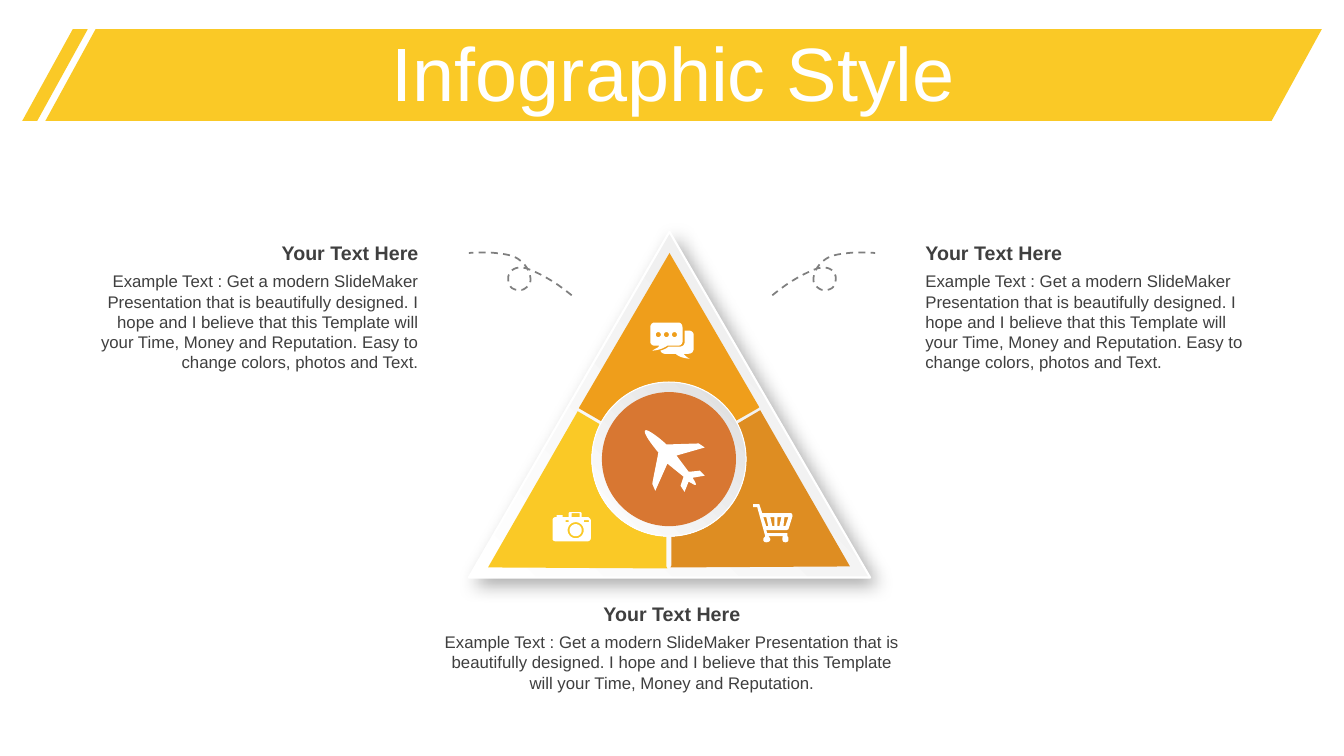
import pptx
import pptx.dml.color
import pptx.enum.dml
import pptx.enum.shapes
import pptx.enum.text
import pptx.util
from lxml import etree
from math import cos, pi, sin
from pptx.util import Inches

THEME = dict(
    font="Arial", title_size=54, heading_size=14, body_size=12, white="FFFFFF",
    yellow="FAC926", orange="EF9E1B", amber="DE8D22", rust="D87732",
    text="3F3F3F", dash="7F7F7F", triangle_shade="EAEAEA", ring_shade="DDDDDD",
)
SLIDE_W, SLIDE_H = 13.33, 7.5
TITLE = "Infographic Style"
HEADING = "Your Text Here"
SHORT = ("Example Text : Get a modern SlideMaker Presentation that is beautifully "
         "designed. I hope and I believe that this Template will your Time, Money "
         "and Reputation.")
LONG = SHORT + " Easy to change colors, photos and Text."
BLOCKS = [
    (9.08, 2.34, 3.47, 1.11, "LEFT", LONG),
    (0.78, 2.34, 3.47, 1.11, "RIGHT", LONG),
    (4.25, 5.92, 4.83, 0.71, "CENTER", SHORT),
]
BANNERS = [(0.45, 12.66, 0.547), (0.22, 0.65, 0.771)]
SEGMENTS = [
    ("orange", "M 6.64 2.51 L 7.53 4.04 L 7.52 4.05 L 6.62 4.56 L 5.74 4.05"),
    ("amber", "M 8.43 5.62 L 6.65 5.63 L 6.66 5.61 L 6.66 4.59 L 7.54 4.07"),
    ("yellow", "M 4.84 5.63 L 6.62 5.64 L 6.61 5.62 L 6.61 4.6 L 5.73 4.08"),
]
SWIRL = """M 7.66 2.93 C 7.84 2.78 8.02 2.69 8.12 2.66 C 8.22 2.64 8.26 2.68 8.28 2.72
C 8.3 2.75 8.29 2.83 8.25 2.86 C 8.2 2.89 8.14 2.88 8.12 2.86
C 8.09 2.84 8.06 2.81 8.07 2.75 C 8.08 2.68 8.12 2.62 8.19 2.57
C 8.25 2.53 8.33 2.52 8.42 2.51 C 8.5 2.5 8.68 2.51 8.68 2.51"""
CHAT = """O 6.53 3.32 0.025 O 6.61 3.32 0.025 O 6.69 3.32 0.025
M 6.79 3.28 L 6.83 3.28 C 6.86 3.28 6.88 3.3 6.88 3.32 L 6.88 3.46
C 6.88 3.49 6.86 3.51 6.83 3.51 L 6.78 3.51 C 6.79 3.52 6.79 3.53 6.84 3.56
C 6.76 3.55 6.74 3.54 6.7 3.51 L 6.59 3.51 C 6.58 3.51 6.56 3.5 6.55 3.48
C 6.58 3.47 6.61 3.46 6.63 3.44 L 6.74 3.44 C 6.77 3.44 6.79 3.42 6.79 3.4
M 6.49 3.2 L 6.73 3.2 C 6.75 3.2 6.77 3.22 6.77 3.25 L 6.77 3.39
C 6.77 3.41 6.75 3.43 6.73 3.43 L 6.62 3.43 C 6.57 3.46 6.55 3.47 6.47 3.48
C 6.51 3.45 6.52 3.46 6.54 3.43 L 6.49 3.43 C 6.47 3.43 6.45 3.41 6.45 3.39
L 6.45 3.25 C 6.45 3.22 6.47 3.2 6.49 3.2"""
CART = """M 7.78 5.13 L 7.77 5.22 L 7.79 5.22 L 7.82 5.13
M 7.71 5.13 L 7.71 5.22 L 7.73 5.22 L 7.75 5.13
M 7.64 5.13 L 7.66 5.22 L 7.68 5.22 L 7.68 5.13
M 7.57 5.13 L 7.6 5.22 L 7.62 5.22 L 7.6 5.13
M 7.53 5 L 7.56 5.09 L 7.84 5.09 C 7.85 5.09 7.86 5.1 7.86 5.12 L 7.82 5.25
L 7.8 5.26 L 7.6 5.26 L 7.61 5.29 L 7.81 5.29 L 7.81 5.32 L 7.8 5.32
C 7.82 5.32 7.82 5.34 7.82 5.35 C 7.82 5.37 7.81 5.38 7.79 5.38
C 7.77 5.38 7.76 5.37 7.76 5.35 C 7.76 5.34 7.76 5.32 7.77 5.32 L 7.62 5.32
C 7.63 5.33 7.64 5.34 7.64 5.35 C 7.64 5.37 7.62 5.38 7.6 5.38
C 7.58 5.38 7.57 5.37 7.57 5.35 C 7.57 5.34 7.58 5.33 7.59 5.32
L 7.51 5.03 L 7.47 5.03 L 7.47 5"""
CAMERA = """O 5.71 5.26 0.06 O 5.71 5.26 0.08
M 5.61 5.16 L 5.61 5.18 L 5.64 5.18 L 5.64 5.16
M 5.79 5.16 L 5.79 5.18 L 5.84 5.18 L 5.84 5.16
M 5.67 5.09 L 5.67 5.13 L 5.75 5.13 L 5.75 5.09
M 5.65 5.08 L 5.76 5.08 L 5.77 5.09 L 5.77 5.13 L 5.83 5.13
C 5.84 5.13 5.86 5.15 5.86 5.16 L 5.86 5.34 C 5.86 5.36 5.84 5.37 5.83 5.37
L 5.51 5.37 C 5.49 5.37 5.48 5.36 5.48 5.34 L 5.48 5.16
C 5.48 5.15 5.49 5.13 5.51 5.13 L 5.52 5.13 L 5.52 5.11 L 5.58 5.11 L 5.58 5.13
L 5.64 5.13 L 5.64 5.09"""
PLANE = """M 6.99 4.72 L 6.87 4.74 C 6.88 4.76 6.91 4.8 6.9 4.81
C 6.89 4.82 6.86 4.79 6.83 4.78 L 6.79 4.88 L 6.75 4.82 L 6.78 4.73 L 6.62 4.6
L 6.5 4.87 L 6.47 4.8 C 6.49 4.69 6.51 4.6 6.53 4.49
C 6.48 4.43 6.37 4.29 6.4 4.27 C 6.42 4.25 6.56 4.36 6.61 4.41 L 6.93 4.4
L 6.99 4.44 L 6.71 4.52 L 6.83 4.68 C 6.86 4.68 6.94 4.67 6.94 4.67"""
CURVE_STEPS, CIRCLE_STEPS = 8, 32
SHAPE = pptx.enum.shapes.MSO_SHAPE

prs = pptx.Presentation()
prs.slide_width, prs.slide_height = Inches(SLIDE_W), Inches(SLIDE_H)
s = prs.slides.add_slide(prs.slide_layouts[6])


def rgb(name):
    return pptx.dml.color.RGBColor.from_string(THEME[name])


def paint(sp, fill=None, line=None, width=0):
    sp.shadow.inherit = False
    if isinstance(fill, tuple):
        sp.fill.gradient()
        sp.fill.gradient_angle = 225
        for stop, name, position in zip(sp.fill.gradient_stops, fill, (0, 1)):
            stop.color.rgb = rgb(name)
            stop.position = position
    elif fill:
        sp.fill.solid()
        sp.fill.fore_color.rgb = rgb(fill)
    else:
        sp.fill.background()
    if line:
        sp.line.color.rgb = rgb(line)
        sp.line.width = pptx.util.Pt(width)
    else:
        sp.line.fill.background()
    return sp


def preset(kind, x, y, w, h, *style):
    sp = s.shapes.add_shape(kind, Inches(x), Inches(y), Inches(w), Inches(h))
    return paint(sp, *style)


def bezier(a, b, c, d):
    for i in range(1, CURVE_STEPS + 1):
        t = i / CURVE_STEPS
        u = 1 - t
        yield tuple(u**3 * p + 3 * u * u * t * q + 3 * u * t * t * r + t**3 * v
                    for p, q, r, v in zip(a, b, c, d))


def contours(outline):
    tokens = iter(outline.split())
    result = []
    for op in tokens:
        count = {"M": 2, "L": 2, "C": 6, "O": 3}[op]
        n = [float(next(tokens)) for _ in range(count)]
        if op == "M":
            result.append([tuple(n)])
        elif op == "L":
            result[-1].append(tuple(n))
        elif op == "C":
            result[-1].extend(bezier(result[-1][-1], n[:2], n[2:4], n[4:]))
        else:
            x, y, radius = n
            angles = [2 * pi * i / CIRCLE_STEPS for i in range(CIRCLE_STEPS)]
            result.append([(x + radius * cos(a), y + radius * sin(a)) for a in angles])
    return result


def freeform(outline, *style, closed=True, mirror=False):
    fb = None
    for contour in contours(outline):
        points = [(Inches(SLIDE_W - x if mirror else x), Inches(y)) for x, y in contour]
        if fb is None:
            fb = s.shapes.build_freeform(*points[0])
        else:
            fb.move_to(*points[0])
        fb.add_line_segments(points[1:], close=closed)
    return paint(fb.convert_to_shape(), *style)


def textbox(x, y, w, h, text, size, color, align, bold=False):
    tf = s.shapes.add_textbox(Inches(x), Inches(y), Inches(w), Inches(h)).text_frame
    tf.word_wrap = True
    p = tf.paragraphs[0]
    p.alignment = pptx.enum.text.PP_ALIGN[align]
    r = p.add_run()
    r.text = text
    r.font.name, r.font.size, r.font.bold = THEME["font"], pptx.util.Pt(THEME[size]), bold
    r.font.color.rgb = rgb(color)
    return tf


for x, w, slant in BANNERS:
    preset(SHAPE.PARALLELOGRAM, x, 0.29, w, 0.91, "yellow").adjustments[0] = slant
tf = textbox(0.35, 0.37, 12.66, 0.79, TITLE, "title_size", "white", "CENTER")
tf.vertical_anchor = pptx.enum.text.MSO_ANCHOR.MIDDLE
tf.paragraphs[0].line_spacing = 0.9

triangle = preset(SHAPE.ISOSCELES_TRIANGLE, 4.65, 2.3, 3.98, 3.43,
                  ("triangle_shade", "white"), "white", 1.5)
A = "{http://schemas.openxmlformats.org/drawingml/2006/main}"
effects = triangle.element.spPr.find(A + "effectLst")
shadow = etree.SubElement(effects, A + "outerShdw", blurRad=str(pptx.util.Pt(13)),
                          dist=str(pptx.util.Pt(6)), dir=str(45 * 60000),
                          algn="tl", rotWithShape="0")
shade = etree.SubElement(shadow, A + "srgbClr", val="000000")
etree.SubElement(shade, A + "alpha", val="33000")

for color, outline in SEGMENTS:
    freeform(outline, color)
preset(SHAPE.OVAL, 5.87, 3.79, 1.53, 1.53, ("ring_shade", "white"), "white", 0.75)
preset(SHAPE.OVAL, 5.97, 3.89, 1.33, 1.33, "rust")

for x, y, w, h, align, body in BLOCKS:
    textbox(x, y, w, 0.34, HEADING, "heading_size", "text", align, True)
    textbox(x, y + 0.3, w, h, body, "body_size", "text", align)

for mirror in (False, True):
    swirl = freeform(SWIRL, None, "dash", 1.25, closed=False, mirror=mirror)
    swirl.line.dash_style = pptx.enum.dml.MSO_LINE.DASH
for icon in (CHAT, CART, CAMERA, PLANE):
    freeform(icon, "white")

prs.save("out.pptx")
